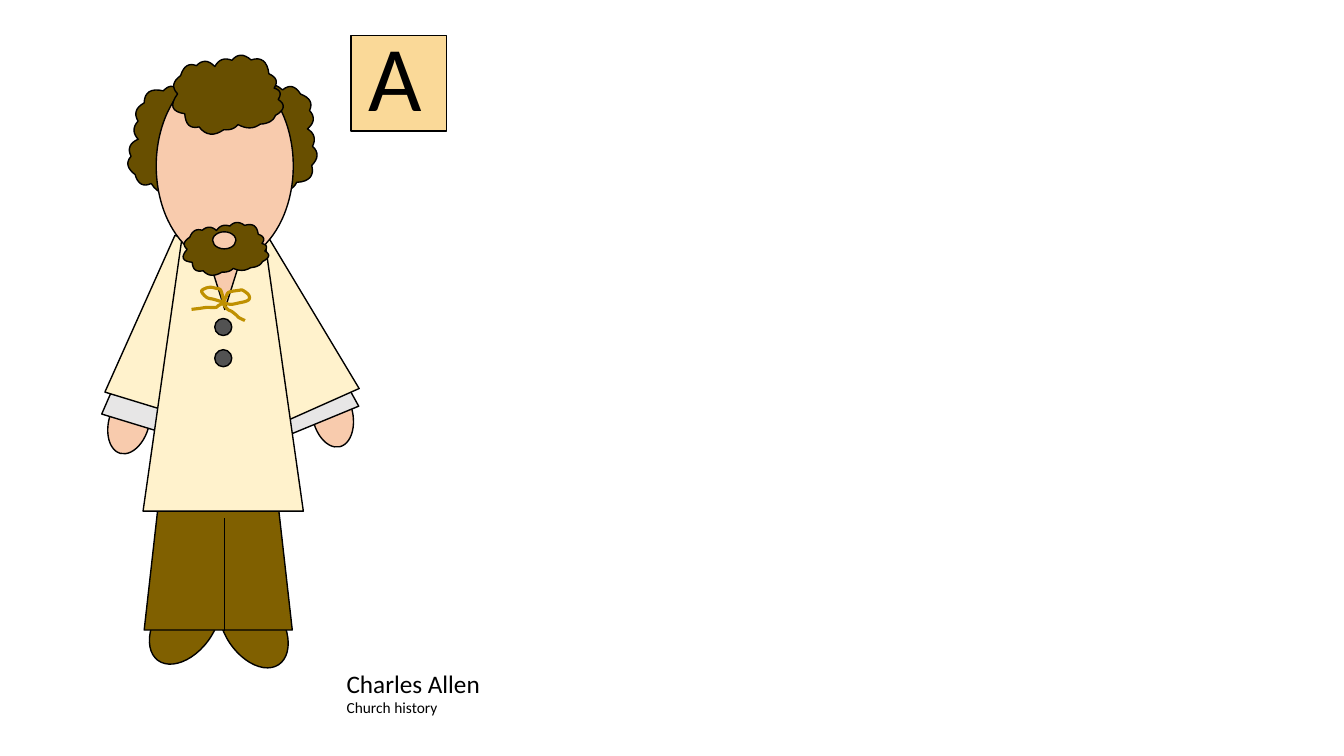
from lxml.etree import SubElement
from pptx import Presentation
from pptx.dml.color import RGBColor
from pptx.enum.shapes import MSO_CONNECTOR, MSO_SHAPE
from pptx.enum.text import MSO_AUTO_SIZE
from pptx.oxml.ns import qn
from pptx.util import Pt

BLACK = RGBColor(0x00, 0x00, 0x00)
SKIN = RGBColor(0xF8, 0xCB, 0xAD)
HAIR = RGBColor(0x68, 0x4F, 0x00)
BROWN = RGBColor(0x80, 0x60, 0x00)
CUFF = RGBColor(0xE7, 0xE6, 0xE6)
CREAM = RGBColor(0xFF, 0xF2, 0xCC)
BUTTON = RGBColor(0x52, 0x52, 0x52)
GOLD = RGBColor(0xBF, 0x90, 0x00)
TILE = RGBColor(0xFA, 0xD9, 0x98)
FONT = "Calibri"

CURL_BOX = (73, 108)
CURL_NOTCHES = [
    (49.5, 4), (64.7, 9.4), (70.6, 25.6), (67.3, 47.5), (69.9, 62.3),
    (63, 85.9), (47.7, 97.7), (27.1, 101.3), (9.8, 95.3), (2.7, 78.2),
    (6.7, 60.3), (3.5, 42.6), (6.3, 23.8), (22.9, 8.7), (37.7, 6),
]
CURL_PEAKS = [
    (58, 0.4), (69.8, 15.6), (72.5, 36.5), (70.5, 54.1), (71.9, 76.2),
    (59.6, 95.6), (39.5, 108), (17.4, 103.5), (1.3, 87.6), (0, 68.6),
    (1.1, 52.1), (0, 33.1), (9.3, 12.1), (30, 2.9), (42.9, 1.1),
]
BOW = [
    (159.8, 215.3), (157.7, 207.4), (154.1, 205.9), (150.5, 205.2),
    (146.9, 205.9), (144, 208.1), (147.6, 212.4), (152.6, 213.8),
    (159.1, 215.3), (161.3, 212.4), (163.4, 208.8), (170.6, 207.4),
    (173.5, 207.4), (177.8, 211), (177.1, 214.6), (169.2, 216.7),
    (164.9, 217.4), (159.8, 216.7), (156.2, 218.2), (154.1, 219.6),
    (147.6, 219.6), (142.6, 220.3), (136.8, 221),
]
BOW_TAIL = [
    (159.8, 217.4), (162.7, 221), (165.6, 222.5),
    (169.2, 225.4), (170.6, 226.8), (175, 229),
]
STEPS = 8


def set_line(sp, color=BLACK, width=1):
    sp.line.color.rgb = color
    sp.line.width = Pt(width)


def set_fill(sp, color):
    sp.shadow.inherit = False
    sp.fill.solid()
    sp.fill.fore_color.rgb = color


def add_part(shapes, kind, left, top, width, height, color, rotation=0):
    sp = shapes.add_shape(kind, Pt(left), Pt(top), Pt(width), Pt(height))
    sp.rotation = rotation
    set_fill(sp, color)
    set_line(sp)
    return sp


def add_outline(shapes, points, close):
    points = [(Pt(x), Pt(y)) for x, y in points]
    builder = shapes.build_freeform(*points[0])
    builder.add_line_segments(points[1:], close=close)
    return builder.convert_to_shape()


def curl_points():
    points = []
    ends = CURL_NOTCHES[1:] + CURL_NOTCHES[:1]
    for start, peak, end in zip(CURL_NOTCHES, CURL_PEAKS, ends):
        for step in range(STEPS):
            t = step / STEPS
            points.append(tuple(
                a * (1 - t) * (1 - 2 * t) + 4 * p * t * (1 - t) + b * t * (2 * t - 1)
                for a, p, b in zip(start, peak, end)))
    return points


def add_curls(shapes, left, top, width, height, rotation):
    fx, fy = width / CURL_BOX[0], height / CURL_BOX[1]
    points = [(left + x * fx, top + y * fy) for x, y in curl_points()]
    sp = add_outline(shapes, points, True)
    sp.rotation = rotation
    set_fill(sp, HAIR)
    set_line(sp)


def smooth(points):
    padded = points[:1] + points + points[-1:]
    result = []
    for a, b, c, d in zip(padded, padded[1:], padded[2:], padded[3:]):
        for step in range(STEPS):
            t = step / STEPS
            result.append(tuple(
                q + t * (r - p + t * (2 * p - 5 * q + 4 * r - s
                                      + t * (3 * q - p - 3 * r + s))) / 2
                for p, q, r, s in zip(a, b, c, d)))
    return result + points[-1:]


def add_ribbon(shapes, points):
    sp = add_outline(shapes, smooth(points), False)
    sp.shadow.inherit = False
    sp.fill.background()
    set_line(sp, GOLD, 2.25)


def add_seam(shapes, x, top, bottom):
    seam = shapes.add_connector(MSO_CONNECTOR.STRAIGHT, Pt(x), Pt(top), Pt(x), Pt(bottom))
    set_line(seam, BLACK, 0.5)
    SubElement(seam._element.spPr, qn("a:effectLst"))


def add_text(shapes, left, top, width, height, lines):
    sp = shapes.add_textbox(Pt(left), Pt(top), Pt(width), Pt(height))
    tf = sp.text_frame
    tf.word_wrap = True
    tf.auto_size = MSO_AUTO_SIZE.SHAPE_TO_FIT_TEXT
    for i, (text, size) in enumerate(lines):
        p = tf.add_paragraph() if i else tf.paragraphs[0]
        r = p.add_run()
        r.text = text
        r.font.name = FONT
        r.font.size = Pt(size)
        r.font.color.rgb = BLACK


def add_clothes(shapes):
    oval, trapezoid = MSO_SHAPE.OVAL, MSO_SHAPE.TRAPEZOID
    for left, top, rotation in ((111.6, 413.3, 36.6), (160.6, 415.4, 326.3)):
        add_part(shapes, oval, left, top, 41, 64.8, BROWN, rotation)
    for left, top, rotation in ((223.2, 273.6, 347.4), (77.8, 278.6, 16)):
        add_part(shapes, oval, left, top, 28.8, 46.1, SKIN, rotation)
    trousers = add_part(shapes, trapezoid, 103, 305.3, 105.8, 144.7, BROWN)
    trousers.adjustments[0] = 0.154
    for left, top, height, color, rotation in (
            (172.8, 174.2, 132.5, CUFF, 337.6), (173.5, 171.4, 123.8, CREAM, 336),
            (90.7, 175, 132.5, CUFF, 17), (91.4, 169.9, 121.7, CREAM, 17)):
        add_part(shapes, trapezoid, left, top, 60.5, height, color, rotation)
    add_part(shapes, trapezoid, 102.2, 164.2, 114.5, 200.9, CREAM)
    add_part(shapes, MSO_SHAPE.ISOSCELES_TRIANGLE, 144, 168.5, 33.1, 52.6, SKIN, 180)
    add_seam(shapes, 160.6, 370.1, 450.7)


def add_head(shapes):
    oval = MSO_SHAPE.OVAL
    add_curls(shapes, 94.3, 59.8, 52.6, 77.8, 10)
    add_curls(shapes, 172.8, 59.8, 52.6, 77.8, 173.9)
    add_part(shapes, oval, 111.6, 49, 97.9, 139, SKIN)
    for top in (227.5, 249.8):
        add_part(shapes, oval, 153.4, top, 12.2, 12.2, BUTTON)
    add_ribbon(shapes, BOW)
    add_ribbon(shapes, BOW_TAIL)
    add_curls(shapes, 135.4, 28.8, 52.6, 77.8, 80.2)
    add_curls(shapes, 143.3, 147.6, 34.6, 60.5, 80.2)
    add_part(shapes, oval, 151.9, 165.6, 16.6, 12.2, SKIN)


def main():
    prs = Presentation()
    prs.slide_width, prs.slide_height = Pt(960), Pt(540)
    s = prs.slides.add_slide(prs.slide_layouts[6])
    add_text(s.shapes, 240.5, 473.8, 172.8, 42.5,
             [("Charles Allen", 18), ("Church history", 11)])
    figure = s.shapes.add_group_shape().shapes
    add_clothes(figure)
    add_head(figure)
    letter = s.shapes.add_group_shape().shapes
    add_part(letter, MSO_SHAPE.RECTANGLE, 250.6, 25.2, 68.4, 68.4, TILE)
    add_text(letter, 256.3, 10.1, 64.1, 87.1, [("A", 66)])
    prs.save("out.pptx")


if __name__ == "__main__":
    main()
